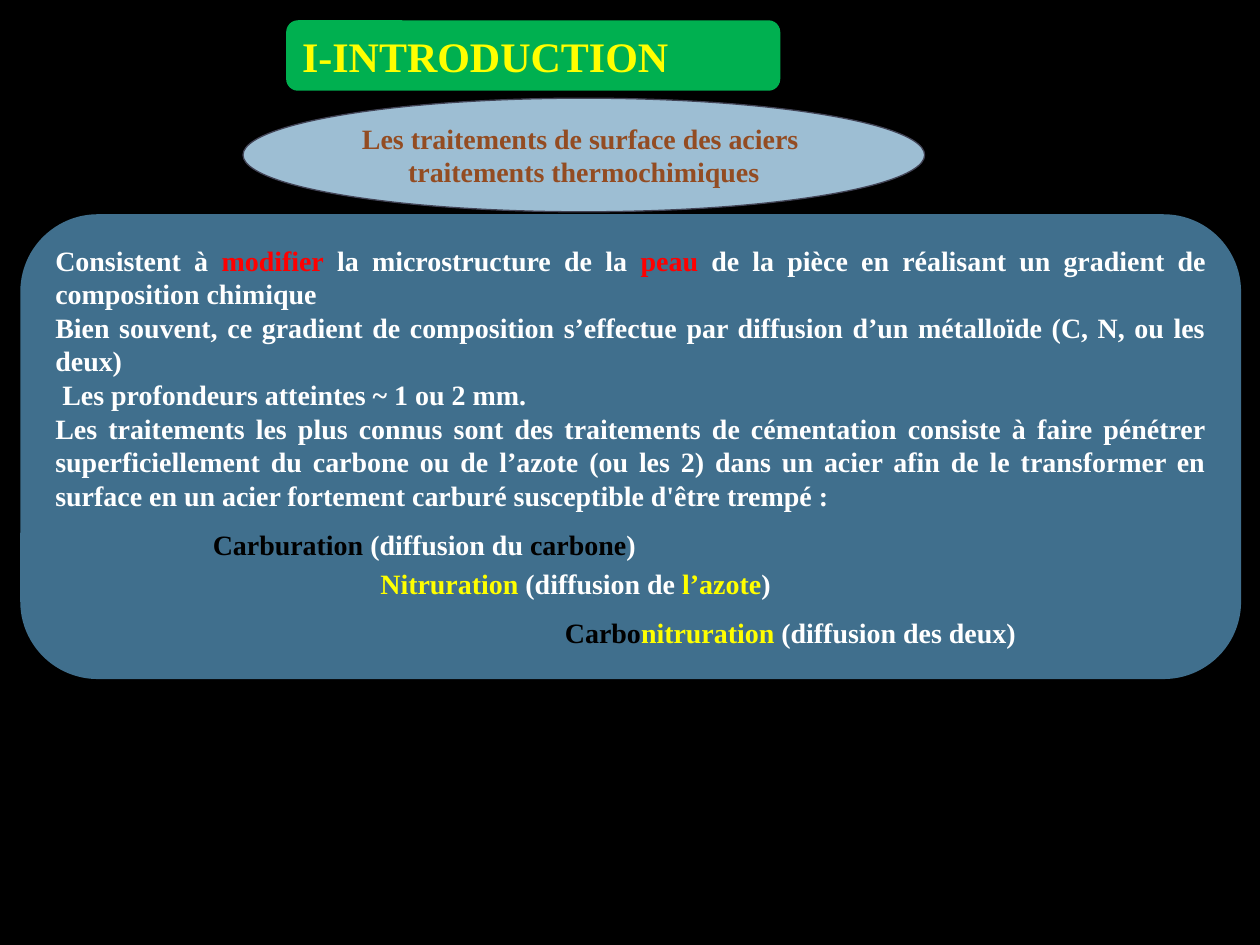
from dataclasses import dataclass
from typing import Optional

from pptx import Presentation
from pptx.dml.color import RGBColor
from pptx.enum.shapes import MSO_SHAPE as Preset
from pptx.enum.text import MSO_ANCHOR as Anchor, PP_ALIGN as Align
from pptx.util import Cm, Pt

BLACK = RGBColor(0x00, 0x00, 0x00)
WHITE = RGBColor(0xFF, 0xFF, 0xFF)
RED = RGBColor(0xFF, 0x00, 0x00)
YELLOW = RGBColor(0xFF, 0xFF, 0x00)
GREEN = RGBColor(0x00, 0xB0, 0x50)
STEEL = RGBColor(0x40, 0x6F, 0x8D)
PALE_BLUE = RGBColor(0x9D, 0xBE, 0xD3)
BROWN = RGBColor(0x93, 0x4C, 0x22)
SLATE = RGBColor(0x42, 0x44, 0x56)

FONT = "Times New Roman"
LABEL_HEIGHT = 0.94
LABEL_INDENT = 1.52


@dataclass(frozen=True)
class Span:
    text: str
    color: RGBColor = WHITE


@dataclass(frozen=True)
class Panel:
    preset: Preset
    place: tuple[float, float, float, float]
    fill: RGBColor
    paras: list[list[Span]]
    align: Align
    anchor: Anchor
    size: int = 16
    line: Optional[RGBColor] = None
    wrap: bool = True


@dataclass(frozen=True)
class Label:
    left: float
    top: float
    width: float
    spans: list[Span]


PANELS = [
    Panel(
        Preset.ROUNDED_RECTANGLE, (0.41, 4.32, 24.61, 9.37), STEEL,
        [
            [
                Span("Consistent à "),
                Span("modifier", RED),
                Span(" la microstructure de la "),
                Span("peau", RED),
                Span(" de la pièce en réalisant un gradient de composition chimique"),
            ],
            [Span("Bien souvent, ce gradient de composition s’effectue par "
                  "diffusion d’un métalloïde (C, N, ou les deux)")],
            [Span(" Les profondeurs atteintes ~ 1 ou 2 mm.")],
            [Span("Les traitements les plus connus sont des traitements de "
                  "cémentation consiste à faire pénétrer superficiellement du "
                  "carbone ou de l’azote (ou les 2) dans un acier afin de le "
                  "transformer en surface en un acier fortement carburé "
                  "susceptible d'être trempé :")],
        ],
        Align.JUSTIFY, Anchor.TOP,
    ),
    Panel(
        Preset.OVAL, (4.9, 1.98, 13.74, 2.29), PALE_BLUE,
        [
            [Span("Les traitements de surface des aciers ", BROWN)],
            [Span("traitements thermochimiques", BROWN)],
        ],
        Align.CENTER, Anchor.MIDDLE, line=SLATE, wrap=False,
    ),
    Panel(
        Preset.ROUNDED_RECTANGLE, (5.77, 0.41, 9.96, 1.42), GREEN,
        [[Span("I-INTRODUCTION", YELLOW)]],
        Align.LEFT, Anchor.MIDDLE, size=24,
    ),
]

LABELS = [
    Label(2.77, 10.52, 10.44, [
        Span("Carburation ", BLACK), Span("(diffusion du "),
        Span("carbone", BLACK), Span(")"),
    ]),
    Label(6.15, 11.3, 9.93, [
        Span("Nitruration ", YELLOW), Span("(diffusion de "),
        Span("l’azote", YELLOW), Span(")"),
    ]),
    Label(9.73, 12.29, 11.15, [
        Span(" Carbo", BLACK), Span("nitruration ", YELLOW),
        Span("(diffusion des deux)"),
    ]),
]


def write_text(frame, paras: list[list[Span]], align: Align, size: int) -> None:
    formats = {"name": FONT, "size": Pt(size), "bold": True}
    for index, spans in enumerate(paras):
        para = frame.add_paragraph() if index else frame.paragraphs[0]
        para.alignment = align
        for span in spans:
            run = para.add_run()
            run.text = span.text
            for name, value in formats.items():
                setattr(run.font, name, value)
            run.font.color.rgb = span.color


def draw_panel(page, panel: Panel) -> None:
    shape = page.shapes.add_shape(panel.preset, *map(Cm, panel.place))
    shape.shadow.inherit = False
    shape.fill.solid()
    shape.fill.fore_color.rgb = panel.fill
    if panel.line is None:
        shape.line.fill.background()
    else:
        shape.line.color.rgb = panel.line
        shape.line.width = Pt(0.75)
    frame = shape.text_frame
    frame.word_wrap = panel.wrap
    frame.vertical_anchor = panel.anchor
    write_text(frame, panel.paras, panel.align, panel.size)


def draw_label(page, label: Label) -> None:
    place = (label.left, label.top, label.width, LABEL_HEIGHT)
    box = page.shapes.add_textbox(*map(Cm, place))
    box.text_frame.word_wrap = True
    box.text_frame.margin_left = Cm(LABEL_INDENT)
    write_text(box.text_frame, [label.spans], Align.JUSTIFY, 16)


def main() -> None:
    deck = Presentation()
    deck.slide_width, deck.slide_height = Cm(25.4), Cm(19.05)
    page = deck.slides.add_slide(deck.slide_layouts[6])
    page.background.fill.solid()
    page.background.fill.fore_color.rgb = BLACK
    for panel in PANELS:
        draw_panel(page, panel)
    for label in LABELS:
        draw_label(page, label)
    deck.save("out.pptx")


if __name__ == "__main__":
    main()
